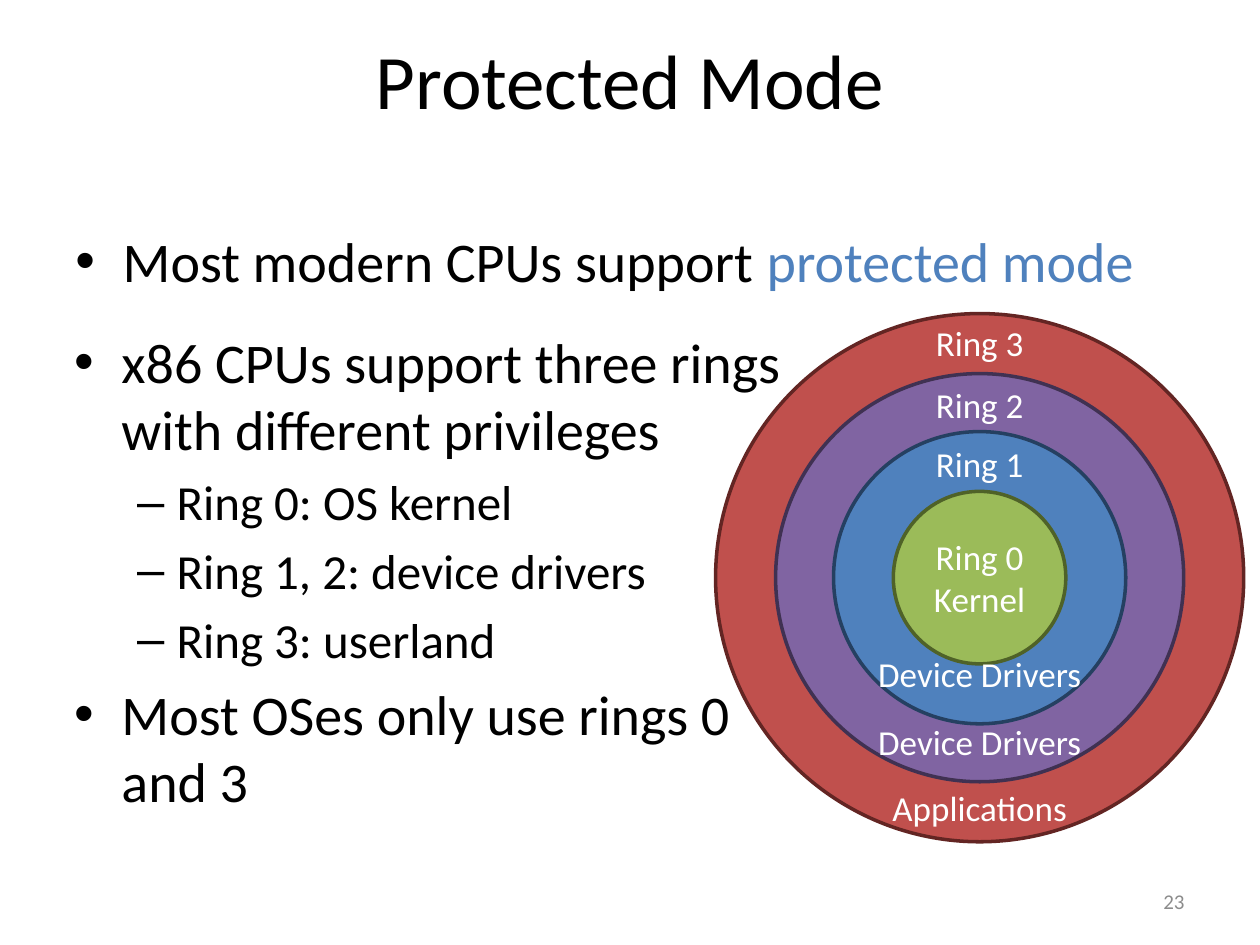
import pptx
import pptx.dml.color
import pptx.enum.shapes
import pptx.enum.text
import pptx.oxml.ns
import pptx.util
from lxml import etree

Pt = pptx.util.Pt
ALIGN = pptx.enum.text.PP_ALIGN
ANCHOR = pptx.enum.text.MSO_ANCHOR

FONT = "Calibri"
COLORS = {
    "black": "000000", "white": "FFFFFF", "gray": "8C8C8C",
    "red": "C0504D", "red_line": "632523",
    "purple": "8064A2", "purple_line": "403152",
    "blue": "4F81BD", "blue_line": "254061",
    "green": "9BBB59", "green_line": "4F6228",
}
CENTER_X, CENTER_Y = 559.8, 330.1

# Outermost first: diameter, color
RINGS = [(301.8, "red"), (233.2, "purple"), (167, "blue"), (98.6, "green")]

# Text, top, width
RING_LABELS = [
    ("Ring 1", 249.2, 65), ("Ring 2", 215.4, 65), ("Ring 3", 180, 65),
    ("Device Drivers", 369.4, 132), ("Device Drivers", 408.4, 132),
    ("Applications", 445.8, 120),
]

# Per level: bullet, left margin, hanging indent, size
LEVELS = [("•", 27, 27, 32), ("–", 58.5, 22.5, 28)]


def color(name):
    return pptx.dml.color.RGBColor.from_string(COLORS[name])


def format_span(span, size, color_name):
    span.font.name = FONT
    span.font.size = Pt(size)
    span.font.color.rgb = color(color_name)


def format_text(frame, size, color_name, align):
    for para in frame.paragraphs:
        para.alignment = align
        for span in para.runs:
            format_span(span, size, color_name)


def add_text(page, bounds, text, size, color_name, align,
             anchor=ANCHOR.TOP, wrap=True):
    box = page.shapes.add_textbox(*map(Pt, bounds))
    frame = box.text_frame
    frame.word_wrap = wrap
    frame.vertical_anchor = anchor
    frame.text = text
    format_text(frame, size, color_name, align)


def add_ring(page, diameter, color_name):
    radius = diameter / 2
    ring = page.shapes.add_shape(
        pptx.enum.shapes.MSO_SHAPE.OVAL, Pt(CENTER_X - radius),
        Pt(CENTER_Y - radius), Pt(diameter), Pt(diameter))
    ring.shadow.inherit = False
    ring.fill.solid()
    ring.fill.fore_color.rgb = color(color_name)
    ring.line.color.rgb = color(color_name + "_line")
    ring.line.width = Pt(2)
    return ring


def set_bullet(para, level):
    char, margin, hanging, size = LEVELS[level]
    para.level = level
    para.space_before = Pt(size * 0.2)
    properties = para._p.get_or_add_pPr()
    properties.set("marL", str(Pt(margin)))
    properties.set("indent", str(-Pt(hanging)))
    qn = pptx.oxml.ns.qn
    etree.SubElement(properties, qn("a:buFont")).set("typeface", "Arial")
    etree.SubElement(properties, qn("a:buChar")).set("char", char)


def add_bullets(page, bounds, items):
    """Each item is a level and a list of (text, color) spans."""
    frame = page.shapes.add_textbox(*map(Pt, bounds)).text_frame
    frame.word_wrap = True
    for index, (level, parts) in enumerate(items):
        para = frame.add_paragraph() if index else frame.paragraphs[0]
        set_bullet(para, level)
        for text, color_name in parts:
            span = para.add_run()
            span.text = text
            format_span(span, LEVELS[level][3], color_name)


def main():
    deck = pptx.Presentation()
    deck.slide_width, deck.slide_height = Pt(720), Pt(540)
    page = deck.slides.add_slide(deck.slide_layouts[6])

    # Title and opening point
    add_text(page, (36, 0, 648, 90), "Protected Mode", 44, "black",
             ALIGN.CENTER, ANCHOR.MIDDLE)
    add_bullets(page, (36, 126, 648, 54.7), [
        (0, [("Most modern CPUs support ", "black"),
             ("protected mode", "blue")]),
    ])

    # Concentric privilege rings, with the kernel in the middle
    for diameter, color_name in RINGS:
        ring = add_ring(page, diameter, color_name)
    ring.text_frame.text = "Ring 0\nKernel"
    ring.text_frame.vertical_anchor = ANCHOR.MIDDLE
    format_text(ring.text_frame, 20, "white", ALIGN.CENTER)

    for text, top, width in RING_LABELS:
        add_text(page, (CENTER_X - width / 2, top, width, 31.5), text, 20,
                 "white", ALIGN.CENTER, wrap=False)

    # Explanation beside the rings
    points = [
        (0, "x86 CPUs support three rings with different privileges"),
        (1, "Ring 0: OS kernel"),
        (1, "Ring 1, 2: device drivers"),
        (1, "Ring 3: userland"),
        (0, "Most OSes only use rings 0 and 3"),
    ]
    add_bullets(page, (35.3, 183.6, 438.5, 297.4),
                [(level, [(text, "black")]) for level, text in points])

    # Page number
    add_text(page, (516, 500.5, 168, 28.75), "23", 12, "gray",
             ALIGN.RIGHT, ANCHOR.MIDDLE)

    deck.save("out.pptx")


if __name__ == "__main__":
    main()
